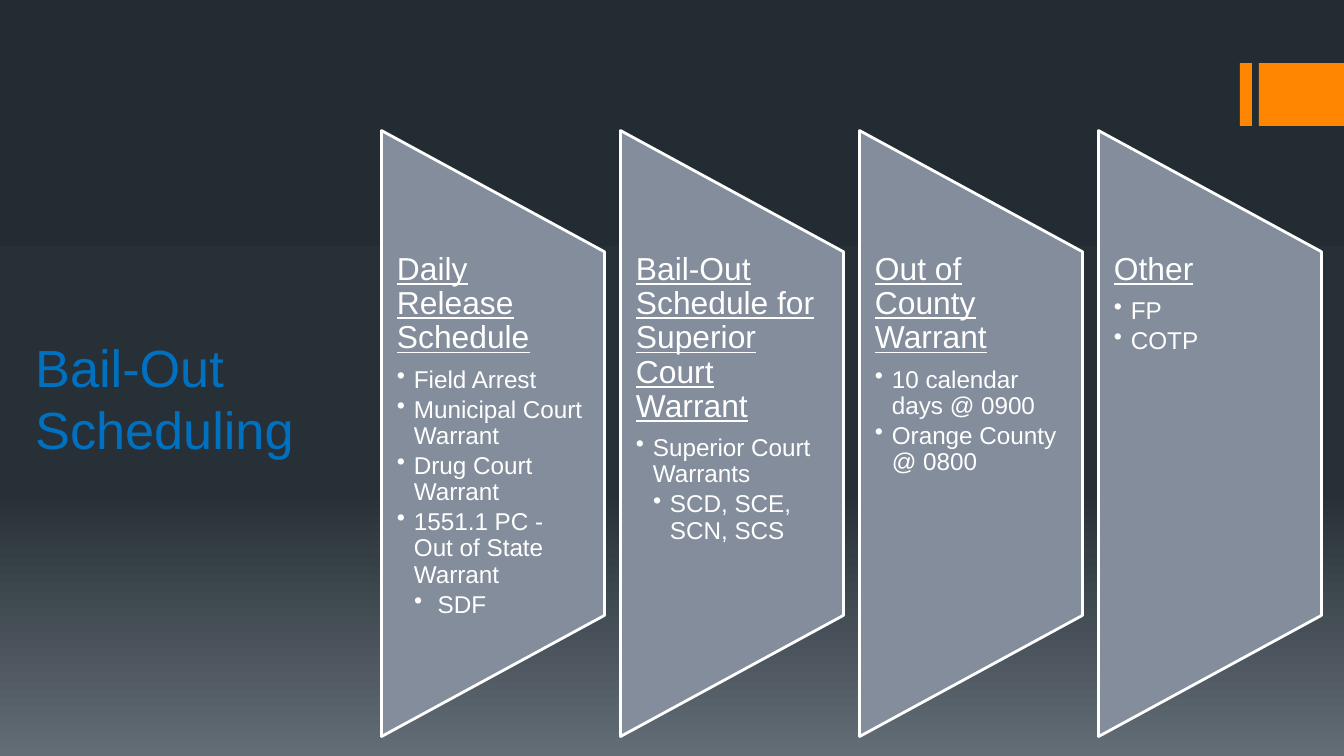
from copy import deepcopy
from dataclasses import dataclass

from lxml.etree import SubElement
from pptx import Presentation
from pptx.dml.color import RGBColor
from pptx.enum.shapes import MSO_SHAPE
from pptx.enum.text import MSO_ANCHOR, PP_ALIGN
from pptx.oxml.ns import qn
from pptx.slide import Slide
from pptx.text.text import _Paragraph
from pptx.util import Pt

EMU_PER_PX = 6804
SLIDE_WIDTH, SLIDE_HEIGHT = 1344, 756
PANEL_LEFT, PANEL_TOP, PANEL_PITCH = 381, 131, 239
PANEL_WIDTH, PANEL_HEIGHT = 223, 606
TEXT_TOP, TEXT_HEIGHT = 253, 364
TEXT_INSET, BULLET_INDENT = 16, 17
ORANGE, GREY, WHITE, BLUE = "FF8600", "838D9B", "FFFFFF", "0070C0"
BACKGROUND_STOPS = [(0, "242C33"), (0.65, "273037"), (1, "636D76")]


@dataclass
class Item:
    """A bulleted entry and its depth below the heading."""
    wording: str
    level: int = 1


@dataclass
class Panel:
    """A warrant category with its entries."""
    heading: str
    items: list[Item]


PANELS = [
    Panel("Daily Release Schedule", [
        Item("Field Arrest"),
        Item("Municipal Court Warrant"),
        Item("Drug Court Warrant"),
        Item("1551.1 PC - Out of State Warrant"),
        Item(" SDF", 2),
    ]),
    Panel("Bail-Out Schedule for Superior Court Warrant", [
        Item("Superior Court Warrants"),
        Item("SCD, SCE, SCN, SCS", 2),
    ]),
    Panel("Out of County Warrant", [
        Item("10 calendar days @ 0900"),
        Item("Orange County @ 0800"),
    ]),
    Panel("Other", [Item("FP"), Item("COTP")]),
]


def px(length: int) -> int:
    """Turn pixels into EMU."""
    return length * EMU_PER_PX


def color(hex_code: str) -> RGBColor:
    """Turn a hex string into a colour."""
    return RGBColor.from_string(hex_code)


def paint_background(slide: Slide) -> None:
    """Give the slide its vertical three-stop gradient."""
    fill = slide.background.fill
    fill.gradient()
    fill.gradient_angle = 270
    stop_list = next(slide.element.iter(qn("a:gsLst")))
    stop_list.append(deepcopy(stop_list[-1]))
    for stop, (position, hex_code) in zip(fill.gradient_stops, BACKGROUND_STOPS):
        stop.position = position
        stop.color.rgb = color(hex_code)


def draw_accent(slide: Slide, left: int, width: int) -> None:
    """Draw one orange block of the corner accent."""
    accent = slide.shapes.add_shape(MSO_SHAPE.RECTANGLE, px(left), px(63), px(width), px(63))
    accent.shadow.inherit = False
    accent.fill.solid()
    accent.fill.fore_color.rgb = color(ORANGE)
    accent.line.fill.background()


def format_runs(paragraph: _Paragraph, size: int, hex_code: str, underline: bool = False) -> None:
    """Set the font of every run in a paragraph."""
    paragraph.alignment = PP_ALIGN.LEFT
    for run in paragraph.runs:
        run.font.name = "Arial"
        run.font.size = Pt(size)
        run.font.color.rgb = color(hex_code)
        run.font.underline = underline


def draw_title(slide: Slide, wording: str) -> None:
    """Write the slide title at the left."""
    title = slide.shapes.add_textbox(px(22), px(310), px(292), px(157)).text_frame
    title.word_wrap = True
    title.vertical_anchor = MSO_ANCHOR.BOTTOM
    title.text = wording
    format_runs(title.paragraphs[0], 28, BLUE)


def add_bullet(paragraph: _Paragraph, level: int) -> None:
    """Give a paragraph a hanging bullet at its level."""
    paragraph.level = level
    properties = paragraph._p.get_or_add_pPr()
    properties.set("marL", str(px(level * BULLET_INDENT)))
    properties.set("indent", str(px(-BULLET_INDENT)))
    SubElement(properties, qn("a:buChar")).set("char", "•")


def draw_panel(slide: Slide, panel: Panel, left: int) -> None:
    """Draw a sideways trapezoid with its heading and entries."""
    offset = (PANEL_HEIGHT - PANEL_WIDTH) // 2
    trapezoid = slide.shapes.add_shape(
        MSO_SHAPE.FLOWCHART_MANUAL_OPERATION,
        px(left - offset), px(PANEL_TOP + offset), px(PANEL_HEIGHT), px(PANEL_WIDTH),
    )
    trapezoid.rotation = 270
    trapezoid.shadow.inherit = False
    trapezoid.fill.solid()
    trapezoid.fill.fore_color.rgb = color(GREY)
    trapezoid.line.color.rgb = color(WHITE)
    trapezoid.line.width = Pt(1.5)

    body = slide.shapes.add_textbox(
        px(left), px(TEXT_TOP), px(PANEL_WIDTH), px(TEXT_HEIGHT)
    ).text_frame
    body.word_wrap = True
    body.margin_left = body.margin_right = px(TEXT_INSET)
    body.margin_top = body.margin_bottom = 0
    heading = body.paragraphs[0]
    heading.text = panel.heading
    heading.line_spacing = 0.9
    heading.space_after = Pt(6)
    format_runs(heading, 17, WHITE, underline=True)
    for item in panel.items:
        entry = body.add_paragraph()
        entry.text = item.wording
        entry.line_spacing = 0.9
        entry.space_after = Pt(2)
        format_runs(entry, 13, WHITE)
        add_bullet(entry, item.level)


def main() -> None:
    """Build and save the bail-out scheduling slide."""
    presentation = Presentation()
    presentation.slide_width = px(SLIDE_WIDTH)
    presentation.slide_height = px(SLIDE_HEIGHT)
    slide = presentation.slides.add_slide(presentation.slide_layouts[6])
    paint_background(slide)
    draw_accent(slide, 1240, 12)
    draw_accent(slide, 1259, 85)
    draw_title(slide, "Bail-Out Scheduling")
    for index, panel in enumerate(PANELS):
        draw_panel(slide, panel, PANEL_LEFT + index * PANEL_PITCH)
    presentation.save("out.pptx")


if __name__ == "__main__":
    main()
